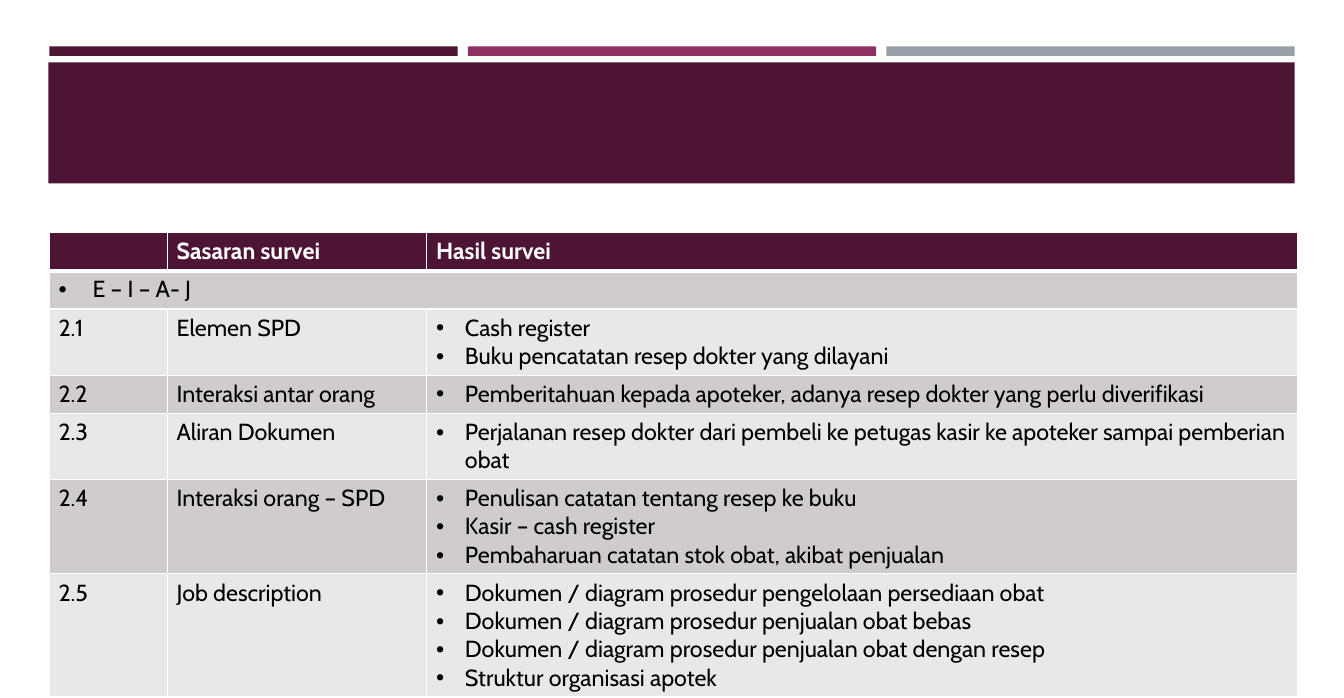
from lxml import etree
from pptx import Presentation, util as u
from pptx.dml.color import RGBColor
from pptx.enum import shapes
from pptx.oxml import ns

PLUM, MAGENTA, GREY = "4D1434", "903163", "969FA7"
BANDS = ["E9E7E8", "D0CCCE"]
WHITE, BLACK = "FFFFFF", "000000"
BULLET_INDENT = u.Inches(0.31)


def paint(fill, color):
    fill.solid()
    fill.fore_color.rgb = RGBColor.from_string(color)


def add_child(parent, tag, **attributes):
    return etree.SubElement(parent, ns.qn(tag), attributes)


presentation = Presentation()
presentation.slide_width = u.Inches(14.45)
presentation.slide_height = u.Inches(7.5)
slide = presentation.slides.add_slide(presentation.slide_layouts[6])

# Three accent strips above the title band
bars = [(0.53 + 4.5 * i, 0.5, 4.39, 0.1, color)
        for i, color in enumerate([PLUM, MAGENTA, GREY])]
bars.append((0.52, 0.67, 13.4, 1.3, PLUM))
for left, top, width, height, color in bars:
    bar = slide.shapes.add_shape(
        shapes.MSO_SHAPE.RECTANGLE, u.Inches(left), u.Inches(top),
        u.Inches(width), u.Inches(height))
    bar.shadow.inherit = False
    bar.line.fill.background()
    paint(bar.fill, color)

# Survey content: number, target, findings, lines of text in the row
survey = [
    ("", "Sasaran survei", ["Hasil survei"], 1),
    (" E – I – A- J", "", [], 1),
    ("2.1", "Elemen SPD",
     ["Cash register", "Buku pencatatan resep dokter yang dilayani"], 2),
    ("2.2", "Interaksi antar orang",
     ["Pemberitahuan kepada apoteker, adanya resep dokter yang perlu diverifikasi"], 1),
    ("2.3", "Aliran Dokumen",
     ["Perjalanan resep dokter dari pembeli ke petugas kasir ke apoteker sampai pemberian obat"], 2),
    ("2.4", "Interaksi orang – SPD",
     ["Penulisan catatan tentang resep ke buku", "Kasir – cash register",
      "Pembaharuan catatan stok obat, akibat penjualan"], 3),
    ("2.5", "Job description",
     ["Dokumen / diagram prosedur pengelolaan persediaan obat",
      "Dokumen / diagram prosedur penjualan obat bebas",
      "Dokumen / diagram prosedur penjualan obat dengan resep",
      "Struktur organisasi apotek"], 4),
]
HEADER, SECTION = 0, 1

# Survey table
table = slide.shapes.add_table(
    len(survey), 3, u.Inches(0.53), u.Inches(2.5),
    u.Inches(13.42), u.Inches(4.97)).table
for column, width in zip(table.columns, [1.27, 2.79, 9.36]):
    column.width = u.Inches(width)
table.cell(SECTION, 0).merge(table.cell(SECTION, 2))

for row, (number, target, findings, line_count) in enumerate(survey):
    table.rows[row].height = u.Inches(0.41 + 0.3 * (line_count - 1))
    for column, lines in enumerate([[number], [target], findings]):
        cell = table.cell(row, column)

        # White borders, thicker under the header
        properties = cell._tc.get_or_add_tcPr()
        for side in "LRTB":
            thick = (row, side) in [(HEADER, "B"), (SECTION, "T")]
            border = add_child(properties, f"a:ln{side}",
                               w=str(u.Pt(3 if thick else 1)))
            add_child(add_child(border, "a:solidFill"), "a:srgbClr", val=WHITE)
        paint(cell.fill, PLUM if row == HEADER else BANDS[row % 2])

        # Cell text, bulleted in the section row and the findings
        bulleted = row == SECTION or (row > SECTION and column == 2)
        for i, line in enumerate(lines):
            if not line:
                continue
            frame = cell.text_frame
            paragraph = frame.add_paragraph() if i else frame.paragraphs[0]
            if bulleted:
                bullet = paragraph._p.get_or_add_pPr()
                bullet.set("marL", str(BULLET_INDENT))
                bullet.set("indent", str(-BULLET_INDENT))
                add_child(bullet, "a:buFont", typeface="Arial")
                add_child(bullet, "a:buChar", char="•")
            run = paragraph.add_run()
            run.text = line
            run.font.name = "Cabin"
            run.font.size = u.Pt(18)
            run.font.bold = row == HEADER
            paint(run.font.fill, WHITE if row == HEADER else BLACK)

presentation.save("out.pptx")
